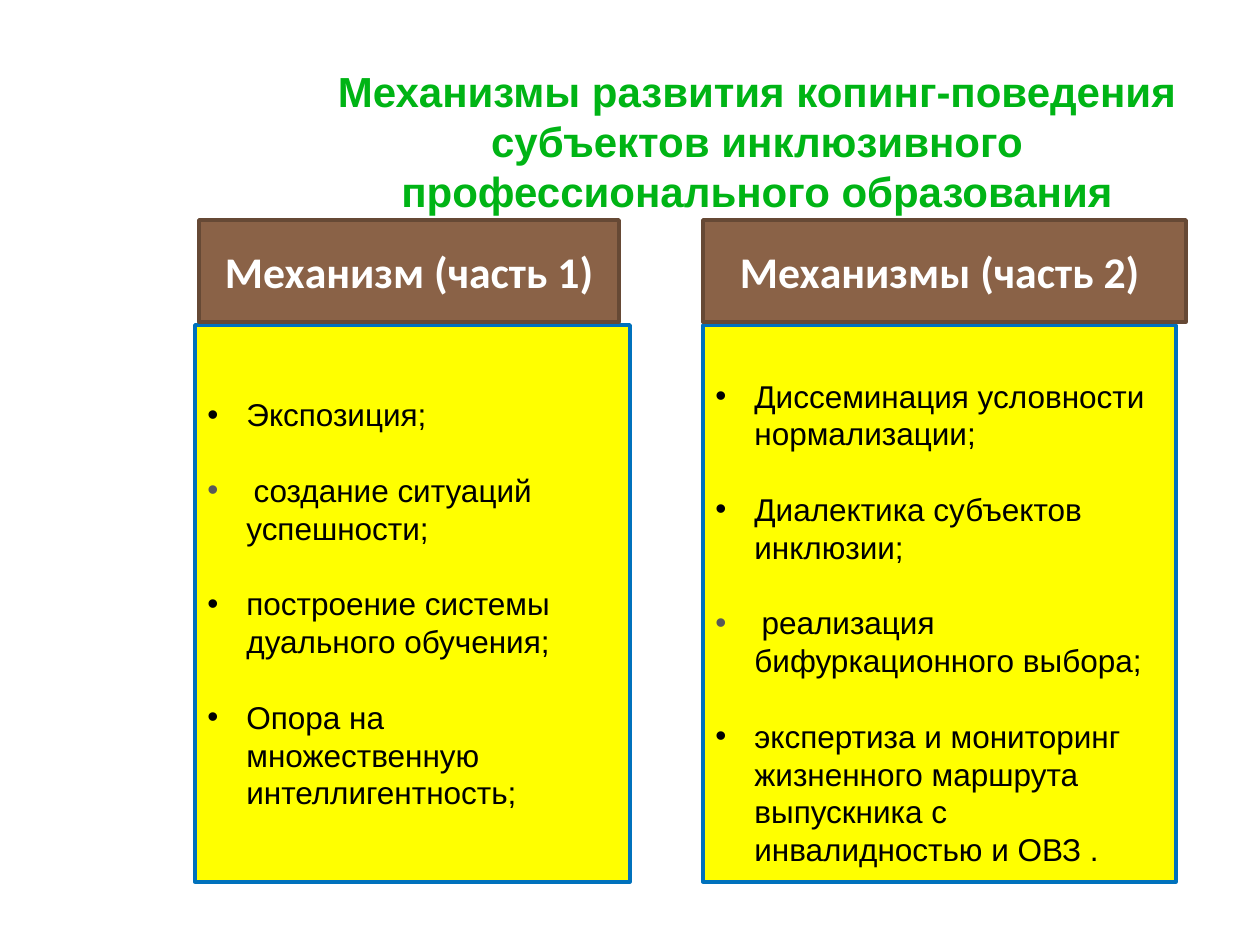
import pptx
import pptx.dml.color
import pptx.enum.shapes
import pptx.enum.text
import pptx.oxml.ns
import pptx.util
from lxml import etree

PX_PER_INCH = 126
COLORS = {
    "title": "00B415",
    "header": "8A6247",
    "header_line": "664935",
    "panel": "FFFF00",
    "panel_line": "0071BC",
    "text": "000000",
    "lead": "595959",
    "white": "FFFFFF",
}
COLUMNS = [
    {
        "header": ("Механизм (часть 1)", 199, 420),
        "panel": (195, 435),
        "top_inset": 6,
        "items": [
            "Экспозиция;",
            " создание ситуаций успешности;",
            "построение системы дуального обучения;",
            "Опора на множественную интеллигентность;",
        ],
    },
    {
        "header": ("Механизмы (часть 2) ", 703, 483),
        "panel": (703, 473),
        "top_inset": 44,
        "items": [
            "Диссеминация условности нормализации;",
            "Диалектика субъектов инклюзии;",
            " реализация бифуркационного выбора;",
            "экспертиза и мониторинг жизненного маршрута выпускника с инвалидностью и ОВЗ .",
        ],
    },
]


def px(n):
    return pptx.util.Emu(round(n * 914400 / PX_PER_INCH))


def rgb(name):
    return pptx.dml.color.RGBColor.from_string(COLORS[name])


def add_run(p, text, size, font, color, bold=False):
    r = p.add_run()
    r.text = text
    r.font.size = pptx.util.Pt(size)
    r.font.name = font
    r.font.bold = bold
    r.font.color.rgb = rgb(color)


def add_bullet(p):
    pPr = p._p.get_or_add_pPr()
    pPr.set("marL", str(px(39)))
    pPr.set("indent", str(-px(39)))
    font = etree.SubElement(pPr, pptx.oxml.ns.qn("a:buFont"))
    font.set("typeface", "Arial")
    bullet = etree.SubElement(pPr, pptx.oxml.ns.qn("a:buChar"))
    bullet.set("char", "•")


def add_title(s, text):
    sp = s.shapes.add_textbox(px(273), px(59), px(968), px(165))
    tf = sp.text_frame
    tf.word_wrap = True
    p = tf.paragraphs[0]
    p.alignment = pptx.enum.text.PP_ALIGN.CENTER
    add_run(p, text, 24, "Arial", "title", True)


def add_box(s, left, top, width, height, fill, line):
    kind = pptx.enum.shapes.MSO_SHAPE.RECTANGLE
    sp = s.shapes.add_shape(kind, px(left), px(top), px(width), px(height))
    sp.shadow.inherit = False
    sp.fill.solid()
    sp.fill.fore_color.rgb = rgb(fill)
    sp.line.color.rgb = rgb(line)
    sp.line.width = pptx.util.Pt(2)
    tf = sp.text_frame
    tf.word_wrap = True
    tf.vertical_anchor = pptx.enum.text.MSO_ANCHOR.MIDDLE
    return tf


def add_panel(s, left, width, items, top_inset):
    tf = add_box(s, left, 325, width, 557, "panel", "panel_line")
    tf.margin_top = px(top_inset)
    for i, item in enumerate(items):
        p = tf.add_paragraph() if i else tf.paragraphs[0]
        add_bullet(p)
        p.alignment = pptx.enum.text.PP_ALIGN.LEFT
        if i:
            p.space_before = pptx.util.Pt(21.6)
        if item.startswith(" "):
            add_run(p, " ", 18, "Calibri", "lead")
        add_run(p, item.lstrip(), 18, "Arial", "text")


def add_header(s, text, left, width):
    tf = add_box(s, left, 220, width, 102, "header", "header_line")
    p = tf.paragraphs[0]
    p.alignment = pptx.enum.text.PP_ALIGN.CENTER
    add_run(p, text, 25, "Calibri", "white", True)


def main():
    prs = pptx.Presentation()
    prs.slide_width = px(1260)
    prs.slide_height = px(945)
    s = prs.slides.add_slide(prs.slide_layouts[6])
    add_title(s, "Механизмы развития копинг-поведения субъектов инклюзивного профессионального образования")
    for column in COLUMNS:
        add_panel(s, *column["panel"], column["items"], column["top_inset"])
        add_header(s, *column["header"])
    prs.save("out.pptx")


if __name__ == "__main__":
    main()
